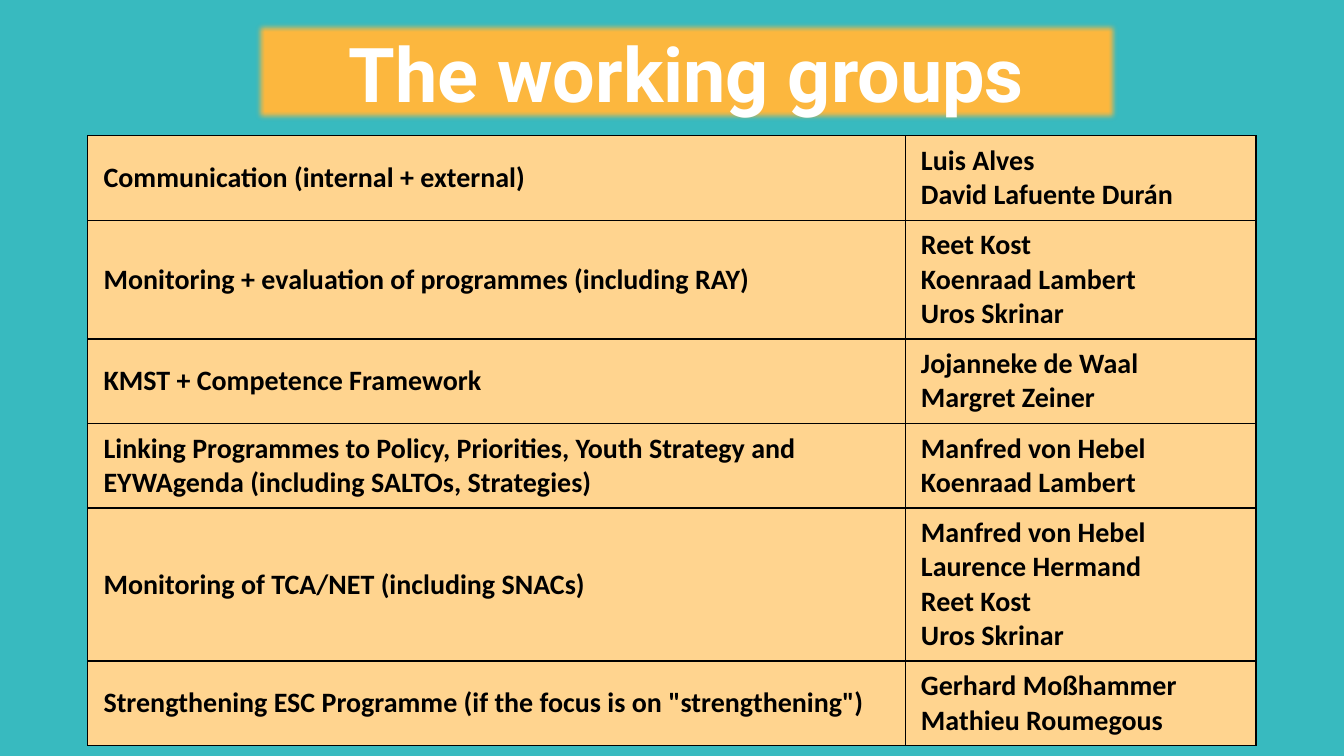
"""Build the slide that lists the working groups and their members."""
from lxml.etree import SubElement
from pptx import Presentation
from pptx.dml.color import RGBColor
from pptx.enum.shapes import MSO_SHAPE
from pptx.enum.text import MSO_ANCHOR, PP_ALIGN
from pptx.oxml.ns import qn
from pptx.util import Cm, Pt

TITLE = "The working groups"
GROUPS = [
    ("Communication (internal + external)", ["Luis Alves", "David Lafuente Durán"]),
    ("Monitoring + evaluation of programmes (including RAY)",
     ["Reet Kost", "Koenraad Lambert", "Uros Skrinar"]),
    ("KMST + Competence Framework", ["Jojanneke de Waal", "Margret Zeiner"]),
    ("Linking Programmes to Policy, Priorities, Youth Strategy and "
     "EYWAgenda (including SALTOs, Strategies)",
     ["Manfred von Hebel", "Koenraad Lambert"]),
    ("Monitoring of TCA/NET (including SNACs)",
     ["Manfred von Hebel", "Laurence Hermand", "Reet Kost", "Uros Skrinar"]),
    ('Strengthening ESC Programme (if the focus is on "strengthening")',
     ["Gerhard Moßhammer", "Mathieu Roumegous"]),
]

TEAL = RGBColor(0x38, 0xBA, 0xBF)
ORANGE = RGBColor(0xFC, 0xB7, 0x3E)
PEACH = RGBColor(0xFF, 0xD4, 0x8F)
WHITE = RGBColor(0xFF, 0xFF, 0xFF)
BLACK = RGBColor(0, 0, 0)

COLUMN_WIDTHS = (20.6, 8.84)
LINE_HEIGHT = 0.86
CELL_PADDING = 0.2


def style_font(paragraph, name, size, color):
    font = paragraph.font
    font.name, font.size, font.bold = name, Pt(size), True
    font.color.rgb = color


def add_title(slide):
    shape = slide.shapes.add_shape(
        MSO_SHAPE.RECTANGLE, Cm(6.38), Cm(0.53), Cm(21.84), Cm(2.57))
    shape.shadow.inherit = False
    shape.fill.solid()
    shape.fill.fore_color.rgb = ORANGE
    shape.line.fill.background()
    effects = shape._element.spPr.find(qn("a:effectLst"))
    SubElement(effects, qn("a:softEdge"), rad=str(Pt(5)))
    paragraph = shape.text_frame.paragraphs[0]
    paragraph.text = TITLE
    paragraph.alignment = PP_ALIGN.CENTER
    style_font(paragraph, "Roboto", 54, WHITE)


def add_borders(cell):
    properties = cell._tc.get_or_add_tcPr()
    for side in ("lnL", "lnR", "lnT", "lnB"):
        line = SubElement(properties, qn(f"a:{side}"), w=str(Pt(1)))
        fill = SubElement(line, qn("a:solidFill"))
        SubElement(fill, qn("a:srgbClr"), val=str(BLACK))


def fill_cell(cell, lines):
    add_borders(cell)
    cell.fill.solid()
    cell.fill.fore_color.rgb = PEACH
    cell.vertical_anchor = MSO_ANCHOR.MIDDLE
    cell.margin_left = cell.margin_right = Cm(0.4)
    cell.margin_top = cell.margin_bottom = Cm(CELL_PADDING)
    cell.text = "\n".join(lines)
    for paragraph in cell.text_frame.paragraphs:
        style_font(paragraph, "Calibri", 20, BLACK)


def add_groups(slide):
    heights = [len(members) * LINE_HEIGHT + 2 * CELL_PADDING for _, members in GROUPS]
    table = slide.shapes.add_table(
        len(GROUPS), len(COLUMN_WIDTHS), Cm(2.21), Cm(3.42),
        Cm(sum(COLUMN_WIDTHS)), Cm(sum(heights))).table
    table.first_row = table.horz_banding = False
    for column, width in zip(table.columns, COLUMN_WIDTHS):
        column.width = Cm(width)
    for row, height, (group, members) in zip(table.rows, heights, GROUPS):
        row.height = Cm(height)
        fill_cell(row.cells[0], [group])
        fill_cell(row.cells[1], members)


def main():
    presentation = Presentation()
    presentation.slide_width, presentation.slide_height = Cm(33.87), Cm(19.05)
    slide = presentation.slides.add_slide(presentation.slide_layouts[6])
    slide.background.fill.solid()
    slide.background.fill.fore_color.rgb = TEAL
    add_groups(slide)
    add_title(slide)
    presentation.save("out.pptx")


if __name__ == "__main__":
    main()
